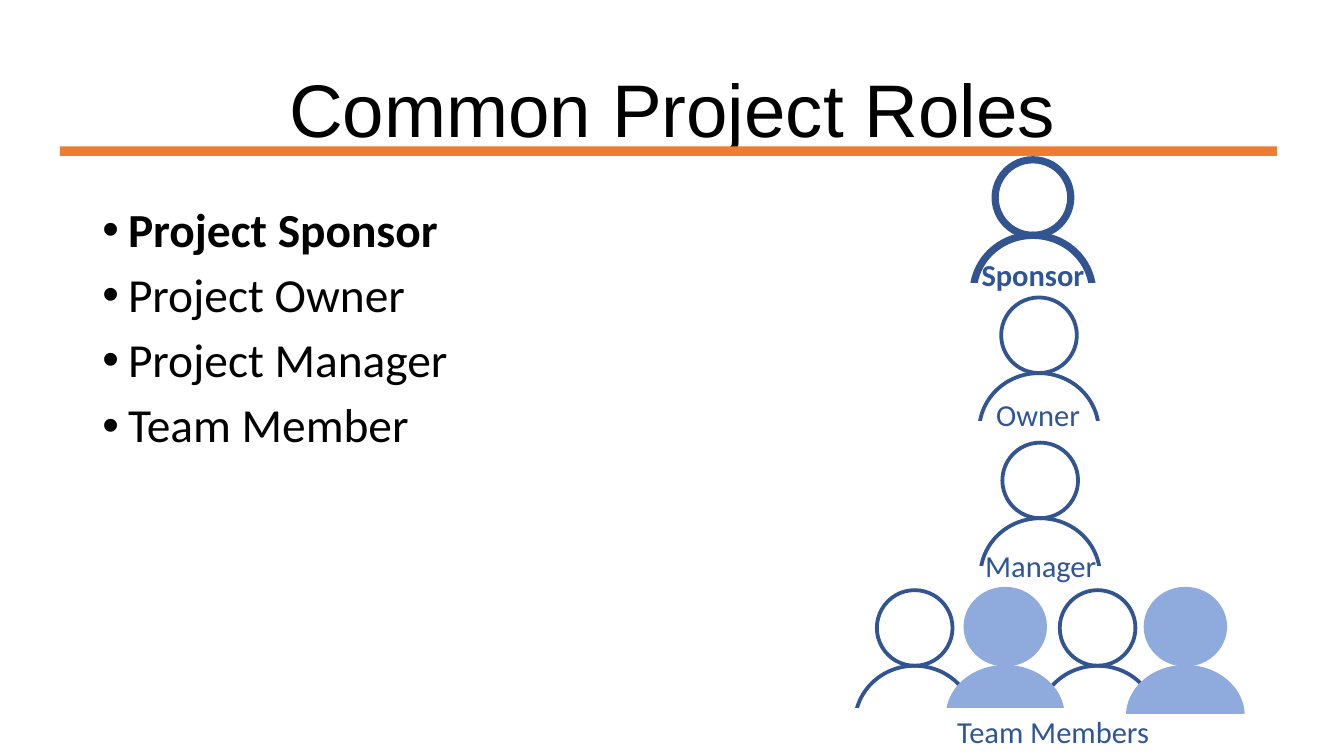
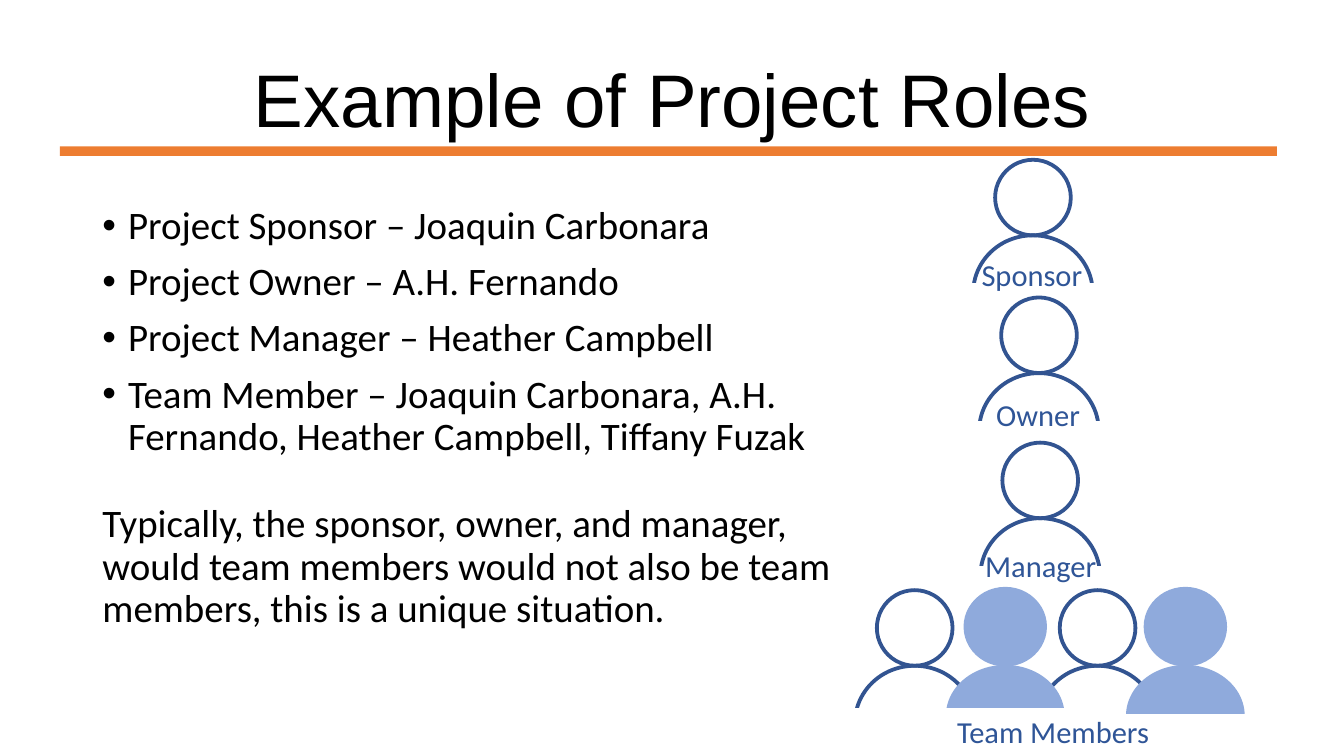
import lxml.etree
import pptx
import pptx.dml.color
import pptx.enum.shapes
import pptx.enum.text
import pptx.oxml.ns
import pptx.util

COLORS = {
    "text": "000000",
    "bar": "ED7D31",
    "outline": "325491",
    "label": "2F5597",
    "member": "8FAADC",
    "paper": "FFFFFF",
}
OVAL = pptx.enum.shapes.MSO_SHAPE.OVAL
RECTANGLE = pptx.enum.shapes.MSO_SHAPE.RECTANGLE

deck = pptx.Presentation()
deck.slide_width = pptx.util.Inches(11.02)
deck.slide_height = pptx.util.Inches(6.2)


def area(left, top, width, height):
    """Turn percentages of the slide's width and height into lengths."""
    column, row = deck.slide_width / 100, deck.slide_height / 100
    return [round(share * unit) for share, unit in
            zip((left, top, width, height), (column, row, column, row))]


def add_plain_shape(shapes, kind, box, fill=None, line=None, weight=1):
    shape = shapes.add_shape(kind, *area(*box))
    shape.shadow.inherit = False
    if fill:
        shape.fill.solid()
        shape.fill.fore_color.rgb = pptx.dml.color.RGBColor.from_string(COLORS[fill])
    else:
        shape.fill.background()
    if line:
        shape.line.color.rgb = pptx.dml.color.RGBColor.from_string(COLORS[line])
        shape.line.width = pptx.util.Pt(weight)
    else:
        shape.line.fill.background()


# Head width and height, shoulder width and height, fill, line
OUTLINED = (5.63, 10, 8.89, 15.16, None, "outline")
SOLID = (6.08, 10.32, 8.71, 13.23, "member", "member")

# Each group holds people: style, centre, top, offset of the mask below the shoulders
GROUPS = [
    [(OUTLINED, 76.86, 21.13, -7.53, 16.45)],
    [(OUTLINED, 77.31, 39.35, -7.53, 16.45)],
    [(OUTLINED, 77.4, 58.55, -7.53, 16.45)],
    [
        (OUTLINED, 68.06, 78.06, -7.53, 16.45),
        (OUTLINED, 81.67, 78.06, -7.53, 16.45),
        (SOLID, 74.8, 77.74, -11.81, 15.97),
        (SOLID, 88.2, 77.74, -9.71, 16.77),
    ],
]
ROLE_LABELS = [
    ("Sponsor", 72.14, 33.06, 9.53),
    ("Owner", 73.23, 51.61, 8.17),
    ("Manager", 72.41, 71.61, 10.16),
    ("Team Members", 70.33, 93.55, 16.24),
]

SLIDES = [
    {
        "title": "Common Project Roles",
        "title_top": 5.32,
        "body_width": 86.3,
        "size": 28,
        "roles": ["Project Sponsor", "Project Owner", "Project Manager", "Team Member"],
        "remark": None,
        "sponsor_stressed": True,
    },
    {
        "title": "Example of Project Roles",
        "title_top": 4.03,
        "body_width": 55.72,
        "size": 23,
        "roles": [
            "Project Sponsor – Joaquin Carbonara",
            "Project Owner – A.H. Fernando",
            "Project Manager – Heather Campbell",
            "Team Member – Joaquin Carbonara, A.H. Fernando, "
            "Heather Campbell, Tiffany Fuzak",
        ],
        "remark": "Typically, the sponsor, owner, and manager, would team members "
                  "would not also be team members, this is a unique situation.",
        "sponsor_stressed": False,
    },
]

for content in SLIDES:
    slide = deck.slides.add_slide(deck.slide_layouts[5])
    stressed = content["sponsor_stressed"]

    title = slide.shapes.title
    title.left, title.top, title.width, title.height = area(
        6.9, content["title_top"], 86.3, 19.35)
    title.text_frame.text = content["title"]
    title.text_frame.vertical_anchor = pptx.enum.text.MSO_ANCHOR.MIDDLE
    heading = title.text_frame.paragraphs[0]
    heading.alignment = pptx.enum.text.PP_ALIGN.CENTER
    heading.line_spacing = 0.9
    heading.font.name = "Arial"
    heading.font.size = pptx.util.Pt(44)
    heading.font.color.rgb = pptx.dml.color.RGBColor.from_string(COLORS["text"])

    body = slide.shapes.add_textbox(
        *area(6.9, 26.61, content["body_width"], 63.39)).text_frame
    body.word_wrap = True
    body.margin_left = body.margin_right = pptx.util.Inches(0.08)
    body.margin_top = body.margin_bottom = pptx.util.Inches(0.04)
    lines = content["roles"] + ([content["remark"]] if content["remark"] else [])
    for index, line in enumerate(lines):
        paragraph = body.paragraphs[0] if index == 0 else body.add_paragraph()
        paragraph.text = line
        paragraph.line_spacing = 0.9
        is_role = index < len(content["roles"])
        if index:
            paragraph.space_before = pptx.util.Pt(8.3 if is_role else 27)
        if is_role:
            properties = paragraph._p.get_or_add_pPr()
            properties.set("marL", str(pptx.util.Inches(0.21)))
            properties.set("indent", str(-pptx.util.Inches(0.21)))
            for tag, key, value in (("a:buFont", "typeface", "Arial"),
                                    ("a:buChar", "char", "•")):
                lxml.etree.SubElement(
                    properties, pptx.oxml.ns.qn(tag)).set(key, value)
        paragraph.font.name = "Calibri"
        paragraph.font.size = pptx.util.Pt(content["size"])
        paragraph.font.bold = stressed and index == 0
        paragraph.font.color.rgb = pptx.dml.color.RGBColor.from_string(COLORS["text"])

    add_plain_shape(slide.shapes, RECTANGLE, (4.45, 19.35, 90.56, 1.29), "bar")

    for group_index, people in enumerate(GROUPS):
        group = slide.shapes.add_group_shape().shapes
        for style, center, top, mask_dx, mask_dy in people:
            head_w, head_h, shoulder_w, shoulder_h, fill, line = style
            weight = 1 if fill else 2.25
            if stressed and group_index == 0:
                weight = 4.25
            add_plain_shape(group, OVAL, (center - head_w / 2, top, head_w, head_h),
                            fill, line, weight)
            add_plain_shape(group, OVAL, (center - shoulder_w / 2, top + head_h,
                                          shoulder_w, shoulder_h), fill, line, weight)
            mask_top = top + mask_dy
            add_plain_shape(group, RECTANGLE, (center + mask_dx, mask_top, 17.51, 10.32),
                            "paper", "paper")

    for label_index, (role, left, top, width) in enumerate(ROLE_LABELS):
        label = slide.shapes.add_textbox(*area(left, top, width, 6.45)).text_frame
        label.word_wrap = False
        label.text = role
        caption = label.paragraphs[0]
        caption.font.name = "Calibri"
        caption.font.size = pptx.util.Pt(18)
        caption.font.bold = stressed and label_index == 0
        caption.font.color.rgb = pptx.dml.color.RGBColor.from_string(COLORS["label"])

deck.save("out.pptx")
